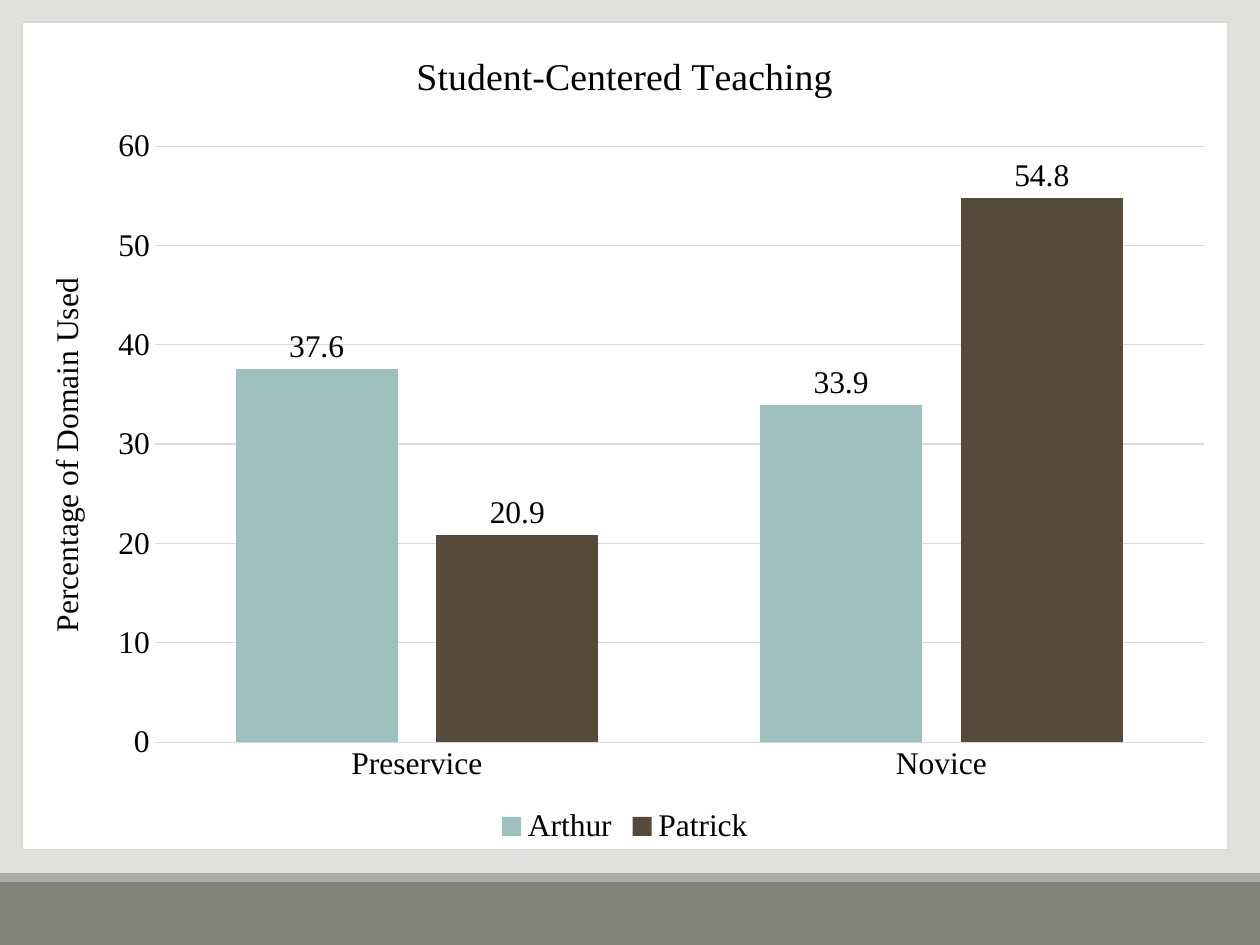
import pptx
import pptx.chart.data
import pptx.dml.color
import pptx.enum.chart
import pptx.enum.shapes
import pptx.oxml
import pptx.oxml.ns
import pptx.util

Inches, Pt = pptx.util.Inches, pptx.util.Pt
RGBColor = pptx.dml.color.RGBColor
xl = pptx.enum.chart

BACKGROUND = RGBColor(0xE1, 0xE1, 0xDB)
FOOTER = RGBColor(0x82, 0x84, 0x7C)
FOOTER_EDGE = RGBColor(0xAC, 0xAD, 0xA8)
TEXT = RGBColor(0, 0, 0)
WHITE = RGBColor(0xFF, 0xFF, 0xFF)
RULE = RGBColor(0xD9, 0xD9, 0xD9)
TEAL = RGBColor(0x9D, 0xBF, 0xBE)
BROWN = RGBColor(0x58, 0x4A, 0x3A)


class Deck:
    """Holds the style and the current slide."""

    font_name = "Times New Roman"
    size = 18
    line_width = Pt(0.75)

    def __init__(self, width, height):
        self.prs = pptx.Presentation()
        self.prs.slide_width, self.prs.slide_height = Inches(width), Inches(height)
        self.slide = None

    def add_slide(self, color):
        self.slide = self.prs.slides.add_slide(self.prs.slide_layouts[6])
        fill = self.slide.background.fill
        fill.solid()
        fill.fore_color.rgb = color

    def band(self, left, top, width, height, color):
        sp = self.slide.shapes.add_shape(
            pptx.enum.shapes.MSO_SHAPE.RECTANGLE,
            Inches(left), Inches(top), Inches(width), Inches(height))
        sp.shadow.inherit = False
        sp.fill.solid()
        sp.fill.fore_color.rgb = color
        sp.line.fill.background()

    def style_font(self, font, size=size):
        font.name, font.size, font.bold = self.font_name, Pt(size), False
        font.color.rgb = TEXT

    def style_line(self, line):
        line.color.rgb = RULE
        line.width = self.line_width

    def set_title(self, owner, text, size=size):
        tf = (owner.chart_title if hasattr(owner, "chart_title") else owner.axis_title).text_frame
        tf.text = text
        self.style_font(tf.paragraphs[0].font, size)

    def frame_chart(self, chart, plot_box):
        """Fill and outline the chart area and place the inner plot area."""
        ns = pptx.oxml.ns.nsdecls("c", "a")
        area = pptx.oxml.parse_xml(
            f'<c:spPr {ns}><a:solidFill><a:srgbClr val="{WHITE}"/></a:solidFill>'
            f'<a:ln w="{self.line_width}"><a:solidFill><a:srgbClr val="{RULE}"/>'
            '</a:solidFill></a:ln></c:spPr>')
        root = chart.element.find(pptx.oxml.ns.qn("c:chart"))
        root.addnext(area)

        parts = "".join(f'<c:{k} val="{v}"/>' for k, v in zip("xywh", plot_box))
        layout = pptx.oxml.parse_xml(
            f'<c:layout {ns}><c:manualLayout><c:layoutTarget val="inner"/>'
            f'<c:xMode val="edge"/><c:yMode val="edge"/>{parts}'
            '</c:manualLayout></c:layout>')
        plot_area = root.find(pptx.oxml.ns.qn("c:plotArea"))
        for old in plot_area.findall(pptx.oxml.ns.qn("c:layout")):
            plot_area.remove(old)
        plot_area.insert(0, layout)

    def column_chart(self, box, title, value_title, categories, series, plot_box):
        data = pptx.chart.data.CategoryChartData()
        data.categories = categories
        for name, values, _ in series:
            data.add_series(name, values)
        chart = self.slide.shapes.add_chart(
            xl.XL_CHART_TYPE.COLUMN_CLUSTERED, *map(Inches, box), data).chart
        self.style_font(chart.font)
        self.frame_chart(chart, plot_box)
        chart.has_title = True
        self.set_title(chart, title, 21.6)

        # Axes
        cat, val = chart.category_axis, chart.value_axis
        for axis in (cat, val):
            axis.major_tick_mark = axis.minor_tick_mark = xl.XL_TICK_MARK.NONE
            self.style_font(axis.tick_labels.font)
        self.style_line(cat.format.line)
        val.format.line.fill.background()
        val.minimum_scale, val.maximum_scale, val.major_unit = 0, 60, 10
        val.has_major_gridlines = True
        self.style_line(val.major_gridlines.format.line)
        self.set_title(val, value_title)

        # Legend
        chart.has_legend = True
        chart.legend.position = xl.XL_LEGEND_POSITION.BOTTOM
        chart.legend.include_in_layout = False
        self.style_font(chart.legend.font)

        # Columns and their labels
        plot = chart.plots[0]
        plot.gap_width, plot.overlap, plot.vary_by_categories = 100, -24, False
        for s, (_, _, color) in zip(plot.series, series):
            s.format.fill.solid()
            s.format.fill.fore_color.rgb = color
            s.invert_if_negative = False
            labels = s.data_labels
            labels.show_value = True
            labels.position = xl.XL_LABEL_POSITION.OUTSIDE_END
            self.style_font(labels.font)


def main():
    deck = Deck(10, 7.5)
    deck.add_slide(BACKGROUND)

    # Footer bands
    deck.band(0, 7, 10, 0.5, FOOTER)
    deck.band(0, 6.93, 10, 0.07, FOOTER_EDGE)

    # Teaching chart
    deck.column_chart(
        (0.17, 0.17, 9.58, 6.58),
        "Student-Centered Teaching", "Percentage of Domain Used",
        ["Preservice", "Novice"],
        [("Arthur", (37.6, 33.9), TEAL), ("Patrick", (20.9, 54.8), BROWN)],
        plot_box=(0.11, 0.15, 0.87, 0.72))

    deck.prs.save("out.pptx")


if __name__ == "__main__":
    main()
